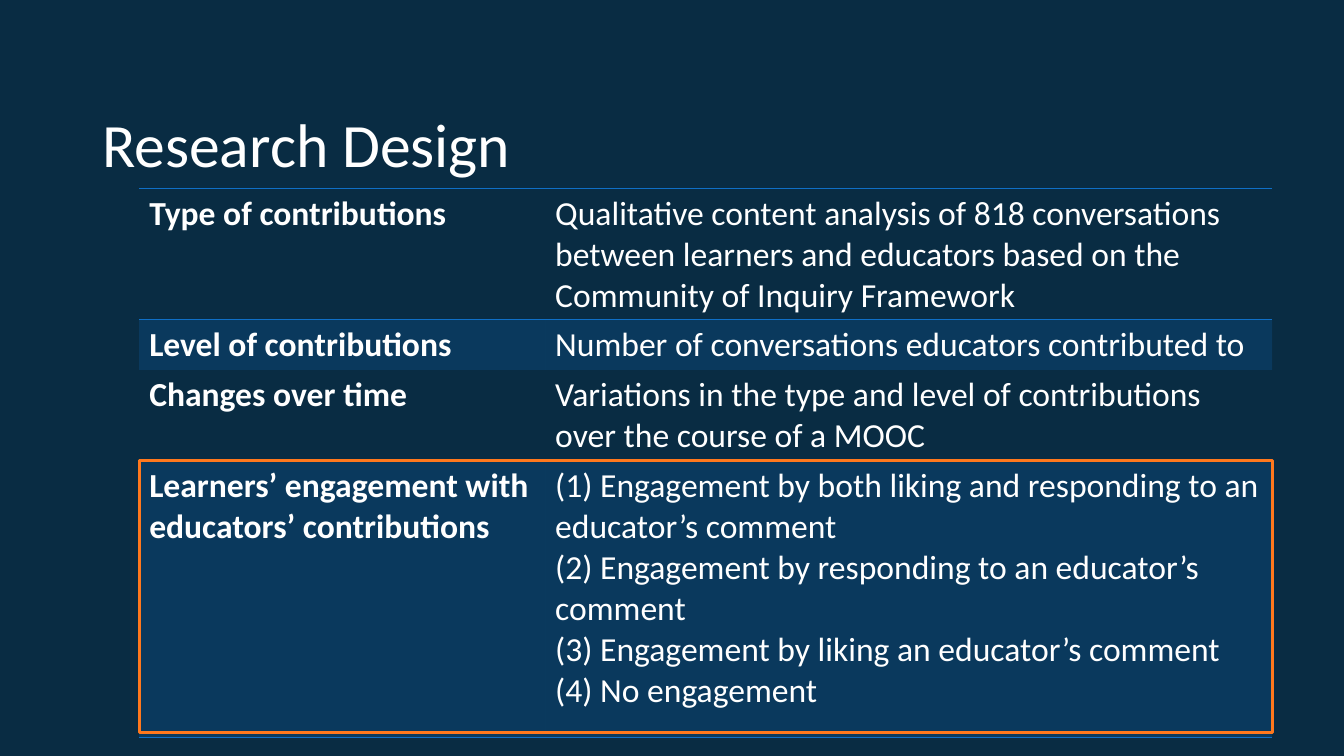
import pptx
import pptx.dml.color
import pptx.enum.shapes
import pptx.enum.text
import pptx.oxml
import pptx.oxml.ns
import pptx.util
from pptx.util import Pt

FONT = "Calibri"
NAVY, WHITE, BLUE, ORANGE = "092C43", "FFFFFF", "0F6FC6", "FF781D"
NO_GRID_STYLE = "{2D5ABB26-0587-4C30-8999-92F81FD0307C}"

TABLE_LEFT, TABLE_TOP = 99.4, 134.5
COLUMN_WIDTHS = [290, 519.3]
ROW_HEIGHTS = [88.5, 34, 61, 198]
DESIGN_ROWS = [
    ("Type of contributions",
     ["Qualitative content analysis of 818 conversations between learners "
      "and educators based on the Community of Inquiry Framework"]),
    ("Level of contributions",
     ["Number of conversations educators contributed to"]),
    ("Changes over time",
     ["Variations in the type and level of contributions over the course of a MOOC"]),
    ("Learners’ engagement with educators’ contributions",
     ["(1) Engagement by both liking and responding to an educator’s comment",
      "(2) Engagement by responding to an educator’s comment",
      "(3) Engagement by liking an educator’s comment",
      "(4) No engagement"]),
]


def color(hex_code):
    return pptx.dml.color.RGBColor.from_string(hex_code)


def write_text(frame, paragraphs, size=24, bold=False, line_spacing=None):
    for index, text in enumerate(paragraphs):
        para = frame.paragraphs[0] if index == 0 else frame.add_paragraph()
        if line_spacing:
            para.line_spacing = line_spacing
        span = para.add_run()
        span.text = text
        span.font.name = FONT
        span.font.size = Pt(size)
        span.font.bold = bold
        span.font.color.rgb = color(WHITE)


def add_title(page, text):
    box = page.shapes.add_textbox(Pt(66), Pt(77.8), Pt(828), Pt(55.4))
    box.text_frame.word_wrap = True
    box.text_frame.vertical_anchor = pptx.enum.text.MSO_ANCHOR.MIDDLE
    write_text(box.text_frame, [text], size=44, line_spacing=0.9)


def add_border(cell, side):
    """Draw a 1 pt line on a cell; side is T or B, added before any fill."""
    namespace = pptx.oxml.ns.nsdecls("a")
    cell._tc.get_or_add_tcPr().append(pptx.oxml.parse_xml(
        f'<a:ln{side} {namespace} w="{Pt(1)}"><a:solidFill>'
        f'<a:srgbClr val="{BLUE}"/></a:solidFill></a:ln{side}>'))


def tint_cell(cell):
    """Fill a cell with blue at 20 % opacity."""
    cell.fill.solid()
    cell.fill.fore_color.rgb = color(BLUE)
    fill = cell._tc.tcPr.find(pptx.oxml.ns.qn("a:solidFill"))
    fill[0].append(pptx.oxml.parse_xml(
        f'<a:alpha {pptx.oxml.ns.nsdecls("a")} val="20000"/>'))


def add_design_table(page):
    frame = page.shapes.add_table(
        len(DESIGN_ROWS), len(COLUMN_WIDTHS), Pt(TABLE_LEFT), Pt(TABLE_TOP),
        Pt(sum(COLUMN_WIDTHS)), Pt(sum(ROW_HEIGHTS)))
    table = frame.table
    table.first_row = table.horz_banding = False
    table._tbl.tblPr.find(pptx.oxml.ns.qn("a:tableStyleId")).text = NO_GRID_STYLE
    for column, width in zip(table.columns, COLUMN_WIDTHS):
        column.width = Pt(width)

    last = len(DESIGN_ROWS) - 1
    for index, (topic, details) in enumerate(DESIGN_ROWS):
        table.rows[index].height = Pt(ROW_HEIGHTS[index])
        for column, paragraphs in enumerate([[topic], details]):
            cell = table.cell(index, column)
            write_text(cell.text_frame, paragraphs, bold=column == 0)
            if index == 0:
                add_border(cell, "T")
            if index in (0, last):
                add_border(cell, "B")
            if index % 2:
                tint_cell(cell)
            else:
                cell.fill.background()


def add_highlight(page):
    frame = page.shapes.add_shape(
        pptx.enum.shapes.MSO_SHAPE.RECTANGLE,
        Pt(TABLE_LEFT), Pt(329), Pt(sum(COLUMN_WIDTHS)), Pt(194.5))
    frame.shadow.inherit = False
    frame.fill.background()
    frame.line.color.rgb = color(ORANGE)
    frame.line.width = Pt(2.25)


def main():
    deck = pptx.Presentation()
    deck.slide_width, deck.slide_height = Pt(960), Pt(540)
    page = deck.slides.add_slide(deck.slide_layouts[6])
    page.background.fill.solid()
    page.background.fill.fore_color.rgb = color(NAVY)
    add_title(page, "Research Design")
    add_design_table(page)
    add_highlight(page)
    deck.save("out.pptx")


if __name__ == "__main__":
    main()
